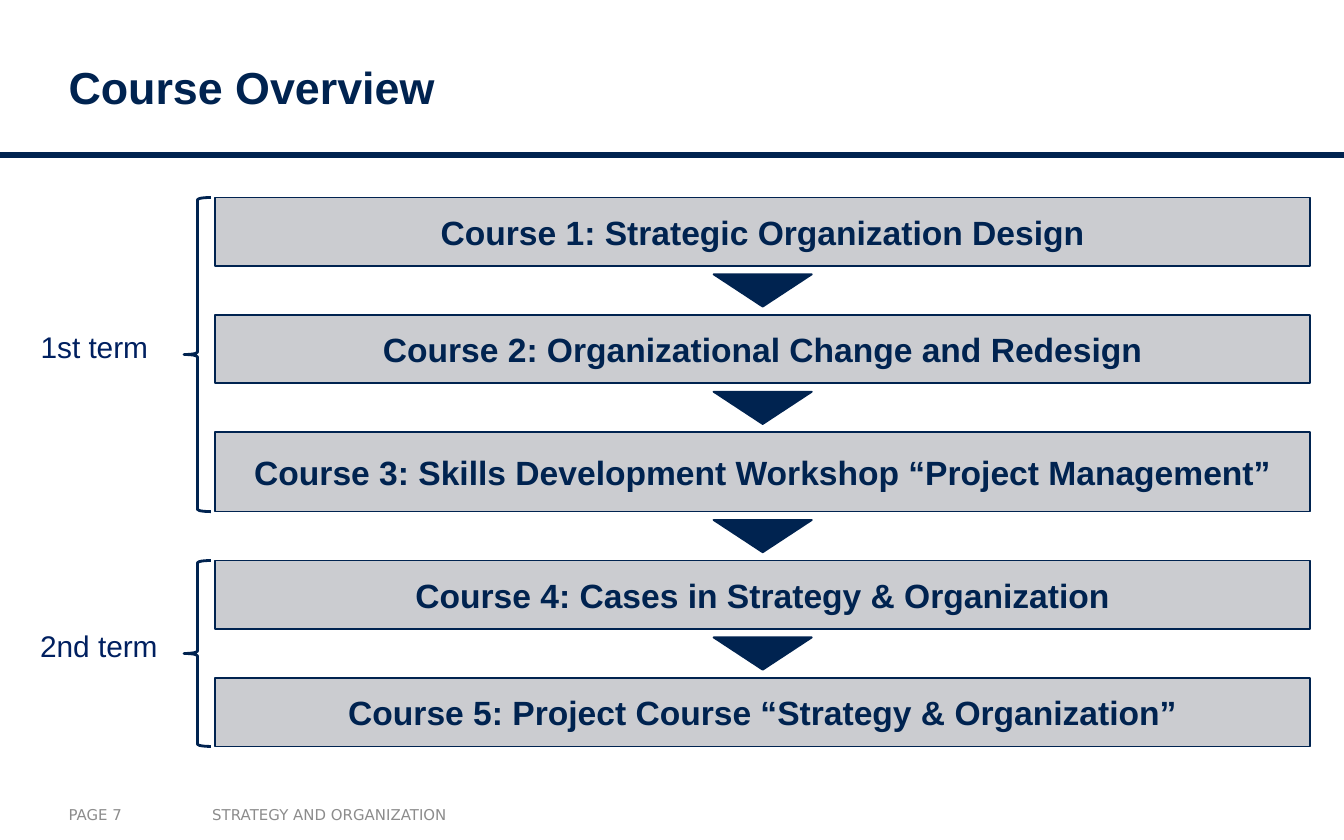
import pptx
import pptx.dml.color
import pptx.enum.shapes
import pptx.enum.text
import pptx.util

Pt = pptx.util.Pt
RGBColor = pptx.dml.color.RGBColor
SHAPE = pptx.enum.shapes.MSO_SHAPE
ALIGN = pptx.enum.text.PP_ALIGN
ANCHOR = pptx.enum.text.MSO_ANCHOR

NAVY = RGBColor(0x00, 0x23, 0x50)
TERM_BLUE = RGBColor(0x00, 0x20, 0x60)
BOX_GRAY = RGBColor(0xCB, 0xCC, 0xD0)
FOOTER_GRAY = RGBColor(0x8C, 0x8C, 0x8C)

TITLE = {"name": "Arial", "size": Pt(24), "bold": True}
COURSE = {"name": "Arial", "size": Pt(18), "bold": True}
TERM = {"name": "Arial", "size": Pt(16), "bold": False}
FOOTER = {"name": "DejaVu Sans", "size": Pt(8), "bold": False}

# Course title and box height
COURSES = [
    ("Course 1: Strategic Organization Design", 36.7),
    ("Course 2: Organizational Change and Redesign", 36.7),
    ("Course 3: Skills Development Workshop “Project Management”", 42.5),
    ("Course 4: Cases in Strategy & Organization", 36.7),
    ("Course 5: Project Course “Strategy & Organization”", 36.7),
]
# Term label, first and last course index, label centre
TERMS = [("1st term", 0, 2, 50.6), ("2nd term", 3, 4, 53)]

BOX_LEFT, BOX_WIDTH, BOX_TOP, BOX_GAP = 115.2, 586.8, 105.8, 26.2
ARROW_WIDTH, ARROW_HEIGHT = 52.6, 17.3
BRACE_LEFT, BRACE_WIDTH = 98.6, 14.4
TERM_WIDTH, TERM_HEIGHT = 100, 33.8


def write_text(sp, text, fmt, color, align=ALIGN.LEFT,
               anchor=ANCHOR.MIDDLE, inset=7.2):
    tf = sp.text_frame
    frame = {"word_wrap": True, "vertical_anchor": anchor,
             "margin_left": Pt(inset), "margin_right": Pt(inset)}
    for key, value in frame.items():
        setattr(tf, key, value)
    p = tf.paragraphs[0]
    p.alignment = align
    r = p.add_run()
    r.text = text
    for key, value in fmt.items():
        setattr(r.font, key, value)
    r.font.color.rgb = color


def add_shape(s, kind, left, top, width, height, fill=None, line_width=1):
    sp = s.shapes.add_shape(kind, Pt(left), Pt(top), Pt(width), Pt(height))
    sp.shadow.inherit = False
    if fill is None:
        sp.fill.background()
    else:
        sp.fill.solid()
        sp.fill.fore_color.rgb = fill
    sp.line.color.rgb = NAVY
    sp.line.width = Pt(line_width)
    return sp


def add_label(s, left, top, width, height, text, fmt, color, **layout):
    sp = s.shapes.add_textbox(Pt(left), Pt(top), Pt(width), Pt(height))
    write_text(sp, text, fmt, color, **layout)


def set_title(s, text):
    sp = s.shapes.title
    place = {"left": 36.7, "top": 10.8, "width": 538.6, "height": 71.3}
    for key, value in place.items():
        setattr(sp, key, Pt(value))
    write_text(sp, text, TITLE, NAVY, inset=0)
    sp.text_frame.margin_top = sp.text_frame.margin_bottom = 0


def add_courses(s):
    """Stack the course boxes with arrows between; return (top, bottom) pairs."""
    spans = []
    top = BOX_TOP
    for i, (text, height) in enumerate(COURSES):
        sp = add_shape(s, SHAPE.RECTANGLE, BOX_LEFT, top, BOX_WIDTH, height, BOX_GRAY)
        write_text(sp, text, COURSE, NAVY, align=ALIGN.CENTER)
        bottom = top + height
        spans.append((top, bottom))
        if i < len(COURSES) - 1:
            arrow = add_shape(s, SHAPE.ISOSCELES_TRIANGLE,
                              BOX_LEFT + (BOX_WIDTH - ARROW_WIDTH) / 2,
                              bottom + (BOX_GAP - ARROW_HEIGHT) / 2,
                              ARROW_WIDTH, ARROW_HEIGHT, NAVY)
            arrow.rotation = 180
        top = bottom + BOX_GAP
    return spans


def add_term(s, text, top, bottom, center):
    add_shape(s, SHAPE.LEFT_BRACE, BRACE_LEFT, top, BRACE_WIDTH, bottom - top,
              line_width=1.5)
    add_label(s, center - TERM_WIDTH / 2, (top + bottom - TERM_HEIGHT) / 2 - 0.5,
              TERM_WIDTH, TERM_HEIGHT, text, TERM, TERM_BLUE,
              align=ALIGN.CENTER, anchor=ANCHOR.TOP)


def main():
    prs = pptx.Presentation()
    prs.slide_width, prs.slide_height = Pt(720), Pt(450)
    s = prs.slides.add_slide(prs.slide_layouts[5])

    set_title(s, "Course Overview")
    add_shape(s, SHAPE.RECTANGLE, 0, 82.1, 720, 2.2, NAVY)
    spans = add_courses(s)
    for text, first, last, center in TERMS:
        add_term(s, text, spans[first][0], spans[last][1], center)
    add_label(s, 36.7, 426.2, 70.6, 20.2, "PAGE 7", FOOTER, FOOTER_GRAY, inset=0)
    add_label(s, 106.6, 426.2, 253.4, 20.2, "STRATEGY AND ORGANIZATION",
              FOOTER, FOOTER_GRAY)

    prs.save("out.pptx")


if __name__ == "__main__":
    main()
